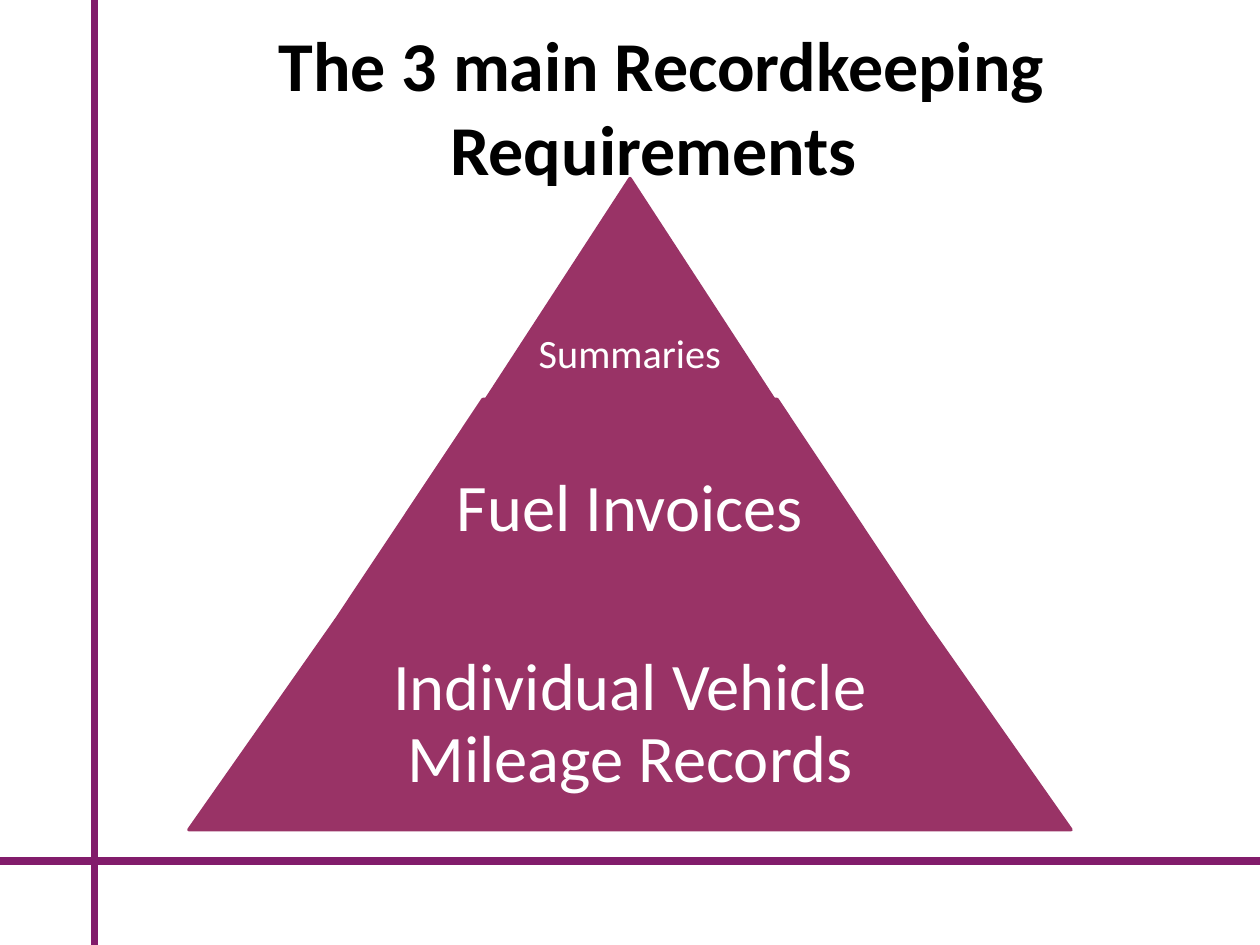
import pptx
import pptx.dml.color
import pptx.enum.shapes
import pptx.enum.text
import pptx.oxml.ns
import pptx.util
import lxml.etree

COLORS = {"background": "FFFFFF", "rule": "821C6B", "tier": "993366",
          "title": "000000", "label": "FFFFFF"}
FONT = "Calibri"
WIDTH = pptx.util.Inches(10)
HEIGHT = pptx.util.Inches(7.5)
MIDDLE = pptx.enum.text.MSO_ANCHOR.MIDDLE
BOTTOM = pptx.enum.text.MSO_ANCHOR.BOTTOM


def color(name):
    return pptx.dml.color.RGBColor.from_string(COLORS[name])


def add_element(parent, tag):
    return lxml.etree.SubElement(parent, pptx.oxml.ns.qn(tag))


def write_text(shape, text, *, size, color_name, bold=False, anchor=MIDDLE,
               line_spacing=1.0, side=0.1, top=0.05, bottom=0.05):
    frame = shape.text_frame
    frame.word_wrap = True
    frame.vertical_anchor = anchor
    frame.margin_left = frame.margin_right = pptx.util.Inches(side)
    frame.margin_top = pptx.util.Inches(top)
    frame.margin_bottom = pptx.util.Inches(bottom)
    paragraph = frame.paragraphs[0]
    paragraph.alignment = pptx.enum.text.PP_ALIGN.CENTER
    paragraph.line_spacing = line_spacing
    run = paragraph.add_run()
    run.text = text
    run.font.name = FONT
    run.font.size = pptx.util.Pt(size)
    run.font.bold = bold
    run.font.color.rgb = color(color_name)


def add_crossing_rules(slide, box):
    left, top, width, height = box
    across = top + height * 0.911
    down = left + width * 0.075
    for ends in ((left, across, left + width, across),
                 (down, top, down, top + height)):
        connector = slide.shapes.add_connector(
            pptx.enum.shapes.MSO_CONNECTOR.STRAIGHT, *map(int, ends))
        connector.line.color.rgb = color("rule")
        connector.line.width = pptx.util.Pt(4.5)
        add_element(connector._element.spPr, "a:effectLst")


def add_title(slide, box):
    shape = slide.shapes.add_textbox(*map(int, box))
    write_text(shape, "The 3 main Recordkeeping Requirements ",
               size=40, color_name="title", bold=True)


def add_tier(slide, center, top, bottom, top_width, bottom_width):
    corners = [(center - bottom_width / 2, bottom), (center - top_width / 2, top),
               (center + top_width / 2, top), (center + bottom_width / 2, bottom)]
    points = [(int(x), int(y)) for x, y in corners]
    builder = slide.shapes.build_freeform(*points[0])
    builder.add_line_segments(points[1:], close=True)
    shape = builder.convert_to_shape()
    shape.shadow.inherit = False
    shape.fill.solid()
    shape.fill.fore_color.rgb = color("tier")
    shape.line.color.rgb = color("tier")
    shape.line.width = pptx.util.Pt(2)
    add_element(shape.line._get_or_add_ln(), "a:round")
    return shape


def add_pyramid(slide, box):
    left, top, width, height = box
    tiers = [
        ("Summaries", 0, 1.79, dict(size=23, anchor=BOTTOM, side=0.03, bottom=0.22)),
        ("Fuel Invoices", 1.75, 3.5, dict(size=38, side=0.87)),
        ("Individual Vehicle Mileage Records", 3.5, 5.16, dict(size=38, side=1.28)),
    ]
    total = tiers[-1][2]
    step = width / len(tiers)
    for index, (label, start, end, style) in enumerate(tiers):
        shape = add_tier(slide, left + width / 2,
                         top + height * start / total, top + height * end / total,
                         step * index, step * (index + 1))
        write_text(shape, label, color_name="label", line_spacing=0.9, **style)


def main():
    presentation = pptx.Presentation()
    presentation.slide_width = WIDTH
    presentation.slide_height = HEIGHT
    slide = presentation.slides.add_slide(presentation.slide_layouts[6])
    slide.background.fill.solid()
    slide.background.fill.fore_color.rgb = color("background")
    add_crossing_rules(slide, (0, 0, WIDTH, HEIGHT))
    add_title(slide, (WIDTH * 0.1, 0, WIDTH * 0.85, HEIGHT * 0.2222))
    add_pyramid(slide, (WIDTH * 0.15, HEIGHT * 0.189, WIDTH * 0.7, HEIGHT * 0.689))
    presentation.save("out.pptx")


if __name__ == "__main__":
    main()
